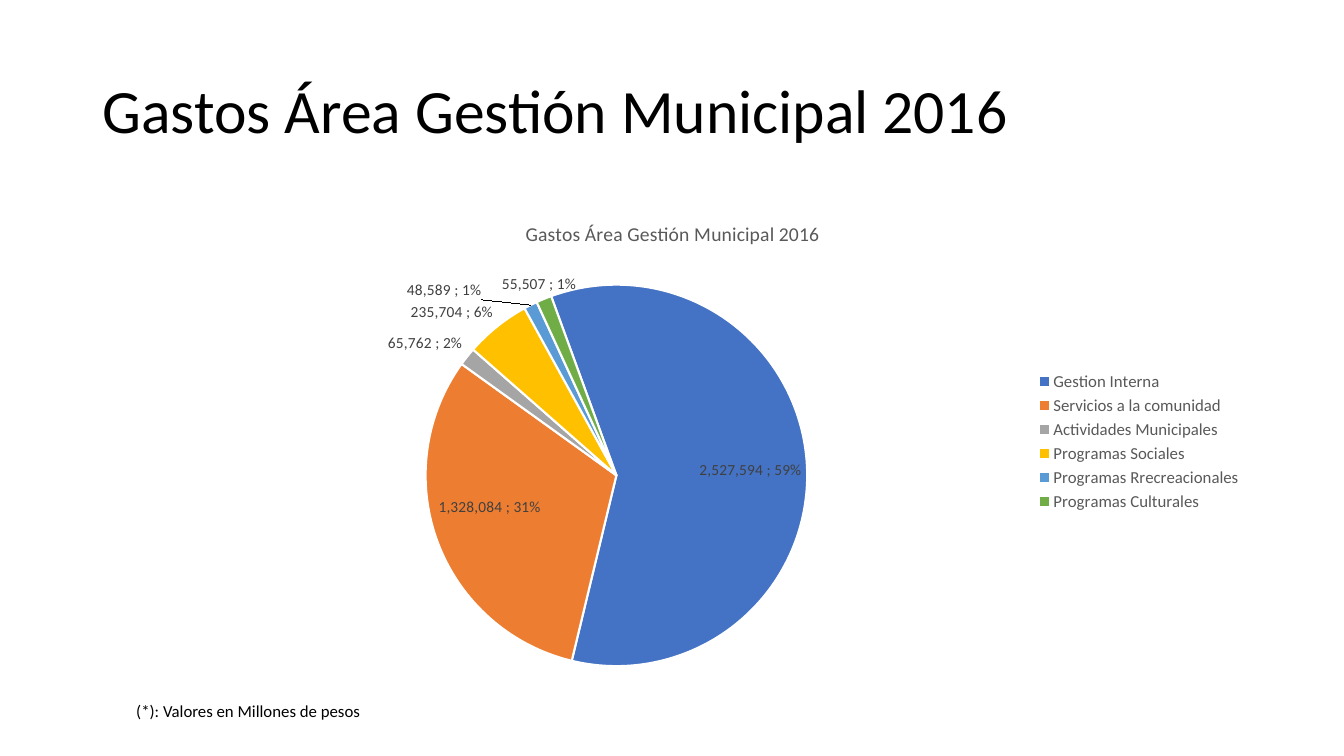
import copy
from dataclasses import dataclass

import pptx
import pptx.chart.data
import pptx.dml.color
import pptx.enum.chart
import pptx.enum.text
import pptx.oxml
import pptx.oxml.ns
import pptx.util

TITLE = "Gastos Área Gestión Municipal 2016"
NOTE = "(*): Valores en Millones de pesos"
COSTS = [
    ("Gestion Interna", 2527594, "4472C4"),
    ("Servicios a la comunidad", 1328084, "ED7D31"),
    ("Actividades Municipales", 65762, "A5A5A5"),
    ("Programas Sociales", 235704, "FFC000"),
    ("Programas Rrecreacionales", 48589, "5B9BD5"),
    ("Programas Culturales", 55507, "70AD47"),
]
MONEY = '_(* #,##0_);_(* \\(#,##0\\);_(* "-"_);_(@_)'
# Label shifts by slice number, as shares of the chart
SHIFTS = {4: (-0.04, 0), 5: (0.03, 0)}
# Pie frame inside the chart, as shares of the chart
FRAME = {"x": 0.287, "y": 0.172, "w": 0.329, "h": 0.796}

WIDE, HIGH = 13.33, 7.5
# Left, top, width, height as shares of the slide
HEAD = (0.069, 0.053, 0.863, 0.193)
PLOT = (0.069, 0.267, 0.863, 0.635)
FOOT = (0.094, 0.92, 0.184, 0.04)


@dataclass
class Theme:
    face: str = "Calibri"
    black: str = "000000"
    grey: str = "595959"
    dark: str = "404040"
    white: str = "FFFFFF"
    head: int = 44
    title: int = 14
    body: int = 12
    label: int = 11
    edge: float = 1.5


THEME = Theme()


def rgb(code):
    return pptx.dml.color.RGBColor.from_string(code)


def place(box):
    return [pptx.util.Inches(part * side)
            for part, side in zip(box, (WIDE, HIGH, WIDE, HIGH))]


def assign(item, values):
    for name, value in values.items():
        setattr(item, name, value)


def style(font, size, color):
    assign(font, {"name": THEME.face, "size": pptx.util.Pt(size), "bold": False})
    font.color.rgb = rgb(color)


def write(slide, box, text, size, frame, spacing=1.0):
    area = slide.shapes.add_textbox(*place(box)).text_frame
    assign(area, frame)
    line = area.paragraphs[0]
    line.line_spacing = spacing
    run = line.add_run()
    run.text = text
    style(run.font, size, THEME.black)


def element(tag, **values):
    """Make a chart element whose children each hold one val."""
    node = pptx.oxml.parse_xml(
        f"<c:{tag} {pptx.oxml.ns.nsdecls('c')}/>")
    for name, value in values.items():
        node.append(pptx.oxml.parse_xml(
            f"<c:{name} {pptx.oxml.ns.nsdecls('c')} val=\"{value}\"/>"))
    return node


def layout(**values):
    node = element("layout")
    node.append(element("manualLayout", **values))
    return node


def label(plot):
    """Show value and share; number formats follow the chart data."""
    plot.has_data_labels = True
    labels = plot.data_labels
    assign(labels, {
        "show_value": True,
        "show_percentage": True,
        "position": pptx.enum.chart.XL_LABEL_POSITION.BEST_FIT,
    })
    style(labels.font, THEME.label, THEME.dark)
    root = labels._element
    for node in root.xpath("c:showLeaderLines | c:numFmt"):
        root.remove(node)
    mark = element("separator")
    mark.text = "; "
    root.append(mark)
    shared = list(root)
    for spot, (index, (x, y)) in enumerate(SHIFTS.items()):
        single = element("dLbl", idx=index)
        single.append(layout(x=x, y=y))
        for node in shared:
            single.append(copy.deepcopy(node))
        root.insert(spot, single)
    root.append(element("showLeaderLines"))
    root[-1].set("val", "1")


def draw(slide):
    names, sums, colors = zip(*COSTS)
    data = pptx.chart.data.CategoryChartData(number_format=MONEY)
    data.categories = names
    data.add_series(TITLE, sums)
    kind = pptx.enum.chart.XL_CHART_TYPE.PIE
    chart = slide.shapes.add_chart(kind, *place(PLOT), data).chart
    style(chart.font, THEME.body, THEME.grey)
    assign(chart, {"has_title": True, "has_legend": True})

    head = chart.chart_title.text_frame
    head.text = TITLE
    style(head.paragraphs[0].runs[0].font, THEME.title, THEME.grey)

    assign(chart.legend, {
        "position": pptx.enum.chart.XL_LEGEND_POSITION.RIGHT,
        "include_in_layout": False,
    })
    style(chart.legend.font, THEME.body, THEME.grey)

    plot = chart.plots[0]
    plot.vary_by_categories = True
    for index, color in enumerate(colors):
        form = plot.series[0].points[index].format
        form.fill.solid()
        form.fill.fore_color.rgb = rgb(color)
        form.line.color.rgb = rgb(THEME.white)
        form.line.width = pptx.util.Pt(THEME.edge)
    label(plot)

    pie = plot._element
    for node in pie.xpath("c:firstSliceAng"):
        pie.remove(node)
    pie.append(element("firstSliceAng"))
    pie[-1].set("val", "340")
    area = pie.getparent()
    for node in area.xpath("c:layout"):
        area.remove(node)
    area.insert(0, layout(layoutTarget="inner", xMode="edge", yMode="edge", **FRAME))


def main():
    deck = pptx.Presentation()
    assign(deck, {"slide_width": pptx.util.Inches(WIDE),
                  "slide_height": pptx.util.Inches(HIGH)})
    slide = deck.slides.add_slide(deck.slide_layouts[6])
    middle = pptx.enum.text.MSO_ANCHOR.MIDDLE
    grow = pptx.enum.text.MSO_AUTO_SIZE.SHAPE_TO_FIT_TEXT
    write(slide, HEAD, TITLE, THEME.head,
          {"word_wrap": True, "vertical_anchor": middle}, 0.9)
    draw(slide)
    write(slide, FOOT, NOTE, THEME.body, {"word_wrap": False, "auto_size": grow})
    deck.save("out.pptx")


if __name__ == "__main__":
    main()
